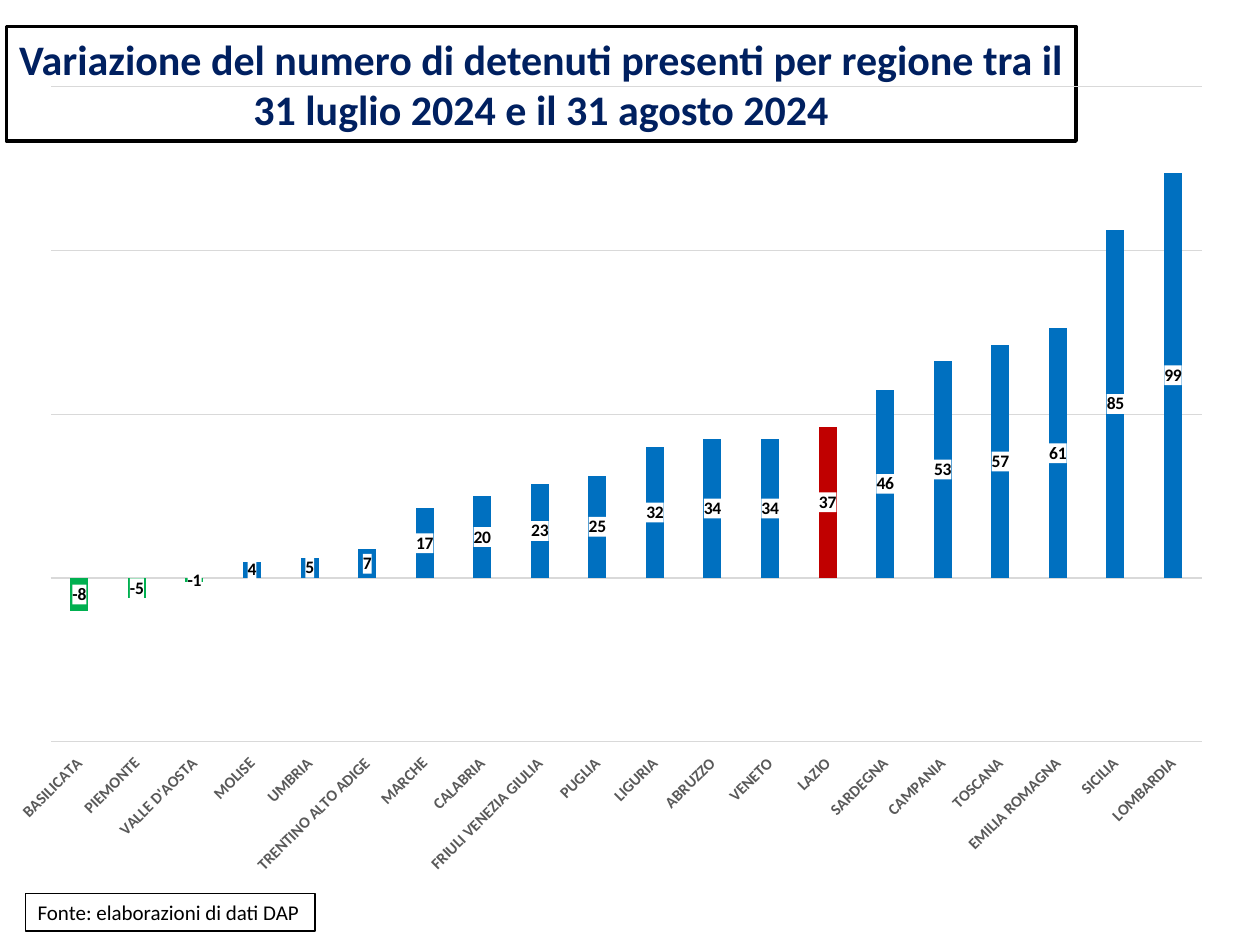
from lxml.etree import fromstring
from pptx import Presentation
from pptx.chart.data import CategoryChartData
from pptx.dml.color import RGBColor
from pptx.enum.chart import (XL_CHART_TYPE, XL_LABEL_POSITION, XL_TICK_LABEL_POSITION,
                             XL_TICK_MARK)
from pptx.enum.shapes import MSO_SHAPE
from pptx.enum.text import MSO_ANCHOR, MSO_AUTO_SIZE, PP_ALIGN
from pptx.util import Inches, Pt

HUES = {"navy": "002060", "blue": "0070C0", "green": "00B050", "red": "C00000",
        "grid": "D9D9D9", "gray": "595959", "black": "000000", "white": "FFFFFF"}
FONT = "Calibri"
FOCUS = "LAZIO"
DATA = {
    "BASILICATA": -8, "PIEMONTE": -5, "VALLE D'AOSTA": -1, "MOLISE": 4, "UMBRIA": 5,
    "TRENTINO ALTO ADIGE": 7, "MARCHE": 17, "CALABRIA": 20,
    "FRIULI VENEZIA GIULIA": 23, "PUGLIA": 25, "LIGURIA": 32, "ABRUZZO": 34,
    "VENETO": 34, "LAZIO": 37, "SARDEGNA": 46, "CAMPANIA": 53, "TOSCANA": 57,
    "EMILIA ROMAGNA": 61, "SICILIA": 85, "LOMBARDIA": 99,
}
NS = ('xmlns:c="http://schemas.openxmlformats.org/drawingml/2006/chart" '
      'xmlns:a="http://schemas.openxmlformats.org/drawingml/2006/main"')


def hue(name):
    return RGBColor.from_string(HUES[name])


def style(font, size, color="black", bold=False):
    font.name, font.size, font.bold = FONT, Pt(size), bold
    font.color.rgb = hue(color)


def paint(item, color):
    item.fill.solid()
    item.fill.fore_color.rgb = hue(color)


def rule(line, color, width=0.75):
    line.color.rgb = hue(color)
    line.width = Pt(width)


def write(shape, text, size, color="black", bold=False, align=PP_ALIGN.LEFT, wrap=True):
    frame = shape.text_frame
    frame.text = text
    frame.word_wrap = wrap
    frame.auto_size = MSO_AUTO_SIZE.SHAPE_TO_FIT_TEXT
    frame.vertical_anchor = MSO_ANCHOR.MIDDLE
    para = frame.paragraphs[0]
    para.alignment = align
    style(para.runs[0].font, size, color, bold)


def add_title(slide, text):
    title = slide.shapes.title
    title.left, title.top = Inches(0.05), Inches(0.21)
    title.width, title.height = Inches(8.49), Inches(0.91)
    paint(title, "white")
    rule(title.line, "black", 2)
    write(title, text, 24, color="navy", bold=True, align=PP_ALIGN.CENTER)


def add_note(slide, text):
    note = slide.shapes.add_shape(MSO_SHAPE.RECTANGLE, Inches(0.2), Inches(7.09),
                                  Inches(2.3), Inches(0.3))
    note.shadow.inherit = False
    paint(note, "white")
    rule(note.line, "black")
    write(note, text, 12, wrap=False)


def place_plot(chart, x, y, w, h):
    """Fix the inner plot area, in fractions of the chart."""
    area = chart._chartSpace.chart.plotArea
    for old in area.xpath("c:layout"):
        area.remove(old)
    sizes = "".join(f'<c:{key} val="{val}"/>'
                    for key, val in zip("xywh", (x, y, w, h)))
    area.insert(0, fromstring(
        f'<c:layout {NS}><c:manualLayout><c:layoutTarget val="inner"/>'
        f'<c:xMode val="edge"/><c:yMode val="edge"/>{sizes}'
        '</c:manualLayout></c:layout>'))


def set_axes(chart):
    cats = chart.category_axis
    cats.tick_label_position = XL_TICK_LABEL_POSITION.LOW
    cats.major_tick_mark = cats.minor_tick_mark = XL_TICK_MARK.NONE
    style(cats.tick_labels.font, 9, "gray", True)
    rule(cats.format.line, "grid")
    cats._element.txPr.bodyPr.set("rot", "-2700000")
    vals = chart.value_axis
    vals.minimum_scale, vals.maximum_scale, vals.major_unit = -40, 120, 40
    vals.has_major_gridlines = True
    rule(vals.major_gridlines.format.line, "grid")
    vals.tick_labels.number_format = "#,##0"
    vals.tick_labels.number_format_is_linked = False
    vals.visible = False


def set_labels(series):
    labels = series.data_labels
    labels.show_value = True
    labels.number_format = "#,##0"
    labels.number_format_is_linked = False
    labels.position = XL_LABEL_POSITION.CENTER
    style(labels.font, 10, bold=True)
    labels._element.xpath("c:numFmt")[0].addnext(fromstring(
        f'<c:spPr {NS}><a:solidFill><a:srgbClr val="{HUES["white"]}"/>'
        '</a:solidFill></c:spPr>'))


def add_bars(slide):
    data = CategoryChartData(number_format="#,##0")
    data.categories = list(DATA)
    data.add_series("Series 1", list(DATA.values()))
    chart = slide.shapes.add_chart(XL_CHART_TYPE.COLUMN_CLUSTERED, Inches(0.11),
                                   Inches(0.56), Inches(9.72), Inches(6.42), data).chart
    chart.has_legend = chart.has_title = False
    style(chart.font, 10)
    place_plot(chart, 0.03, 0.02, 0.94, 0.81)
    set_axes(chart)
    plot = chart.plots[0]
    plot.gap_width, plot.overlap = 219, -27
    plot.vary_by_categories = False
    series = plot.series[0]
    series.invert_if_negative = False
    paint(series.format, "blue")
    for i, (name, val) in enumerate(DATA.items()):
        if val < 0 or name == FOCUS:
            paint(series.points[i].format, "green" if val < 0 else "red")
    set_labels(series)


def main():
    deck = Presentation()
    deck.slide_width, deck.slide_height = Inches(10), Inches(7.5)
    slide = deck.slides.add_slide(deck.slide_layouts[5])
    add_title(slide, "Variazione del numero di detenuti presenti per regione tra il "
                     "31 luglio 2024 e il 31 agosto 2024")
    add_note(slide, "Fonte: elaborazioni di dati DAP")
    add_bars(slide)
    deck.save("out.pptx")


if __name__ == "__main__":
    main()
